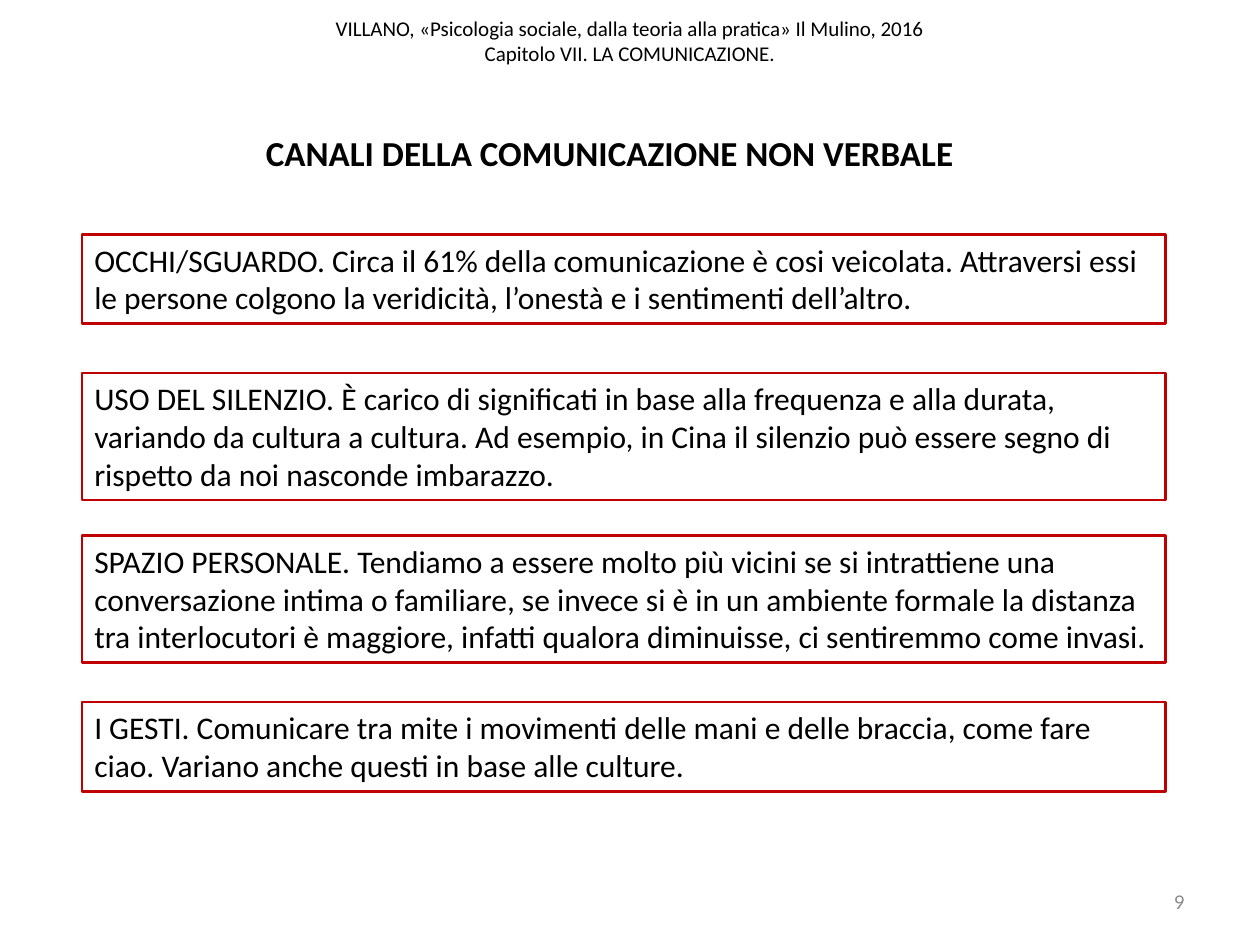
from dataclasses import dataclass

from pptx import Presentation
from pptx.dml.color import RGBColor
from pptx.enum.shapes import MSO_SHAPE
from pptx.enum.text import MSO_ANCHOR, MSO_AUTO_SIZE, PP_ALIGN
from pptx.util import Inches, Pt

# Content
HEADER = ("VILLANO, «Psicologia sociale, dalla teoria alla pratica» Il Mulino, 2016\v"
          "Capitolo VII. LA COMUNICAZIONE.")
TITLE = "CANALI DELLA COMUNICAZIONE NON VERBALE"
PAGE_NUMBER = "9"

# Each channel: top in inches, number of text lines, wording
CHANNELS = [
    (1.86, 2, "OCCHI/SGUARDO. Circa il 61% della comunicazione è cosi veicolata. "
              "Attraversi essi le persone colgono la veridicità, l’onestà e i "
              "sentimenti dell’altro."),
    (2.96, 3, "USO DEL SILENZIO. È carico di significati in base alla frequenza e alla "
              "durata, variando da cultura a cultura. Ad esempio, in Cina il silenzio "
              "può essere segno di rispetto da noi nasconde imbarazzo."),
    (4.25, 3, "SPAZIO PERSONALE. Tendiamo a essere molto più vicini se si intrattiene una "
              "conversazione intima o familiare, se invece si è in un ambiente formale la "
              "distanza tra interlocutori è maggiore, infatti qualora diminuisse, ci "
              "sentiremmo come invasi."),
    (5.57, 2, "I GESTI. Comunicare tra mite i movimenti delle mani e delle braccia, come "
              "fare ciao. Variano anche questi in base alle culture."),
]


@dataclass(frozen=True)
class Theme:
    font: str = "Calibri"
    text: RGBColor = RGBColor(0, 0, 0)
    muted: RGBColor = RGBColor(0x8C, 0x8C, 0x8C)
    border: RGBColor = RGBColor(0xC0, 0, 0)
    small_size: int = 12
    body_size: int = 18
    title_size: int = 20


THEME = Theme()
SLIDE_WIDTH, SLIDE_HEIGHT = 10, 7.5
BOX_LEFT, BOX_WIDTH = 0.065 * SLIDE_WIDTH, 0.86 * SLIDE_WIDTH
LINE_HEIGHT, BOX_PADDING = 0.3, 0.11


def place(shape, left, top, width, height):
    shape.left, shape.top = Inches(left), Inches(top)
    shape.width, shape.height = Inches(width), Inches(height)


def write(shape, text, size, color=THEME.text, bold=False, align=PP_ALIGN.LEFT,
          anchor=MSO_ANCHOR.TOP, wrap=True):
    frame = shape.text_frame
    frame_format = {"word_wrap": wrap, "vertical_anchor": anchor,
                    "auto_size": MSO_AUTO_SIZE.NONE}
    for name, value in frame_format.items():
        setattr(frame, name, value)
    paragraph = frame.paragraphs[0]
    paragraph.text = text
    paragraph.alignment = align
    font_format = {"name": THEME.font, "size": Pt(size), "bold": bold}
    for run in paragraph.runs:
        for name, value in font_format.items():
            setattr(run.font, name, value)
        run.font.color.rgb = color


def add_text(slide, position, text, **text_format):
    text_box = slide.shapes.add_textbox(*map(Inches, position))
    write(text_box, text, THEME.small_size, anchor=MSO_ANCHOR.MIDDLE, **text_format)


def add_channel(slide, top, lines, text):
    height = BOX_PADDING + lines * LINE_HEIGHT
    position = map(Inches, (BOX_LEFT, top, BOX_WIDTH, height))
    box = slide.shapes.add_shape(MSO_SHAPE.RECTANGLE, *position)
    box.shadow.inherit = False
    box.fill.background()
    box.line.color.rgb = THEME.border
    box.line.width = Pt(1.5)
    write(box, text, THEME.body_size)


def main():
    presentation = Presentation()
    presentation.slide_width = Inches(SLIDE_WIDTH)
    presentation.slide_height = Inches(SLIDE_HEIGHT)
    slide = presentation.slides.add_slide(presentation.slide_layouts[5])

    # Running header and page number
    add_text(slide, (0, -0.11, SLIDE_WIDTH, 0.87), HEADER, align=PP_ALIGN.CENTER)
    add_text(slide, (7.17, 6.95, 2.33, 0.4), PAGE_NUMBER,
             color=THEME.muted, align=PP_ALIGN.RIGHT)

    # Title
    title = slide.shapes.title
    place(title, 2.01, 0.99, 5.71, 0.44)
    write(title, TITLE, THEME.title_size, bold=True, wrap=False)

    # Channels of non-verbal communication
    for channel in CHANNELS:
        add_channel(slide, *channel)

    presentation.save("out.pptx")


if __name__ == "__main__":
    main()
